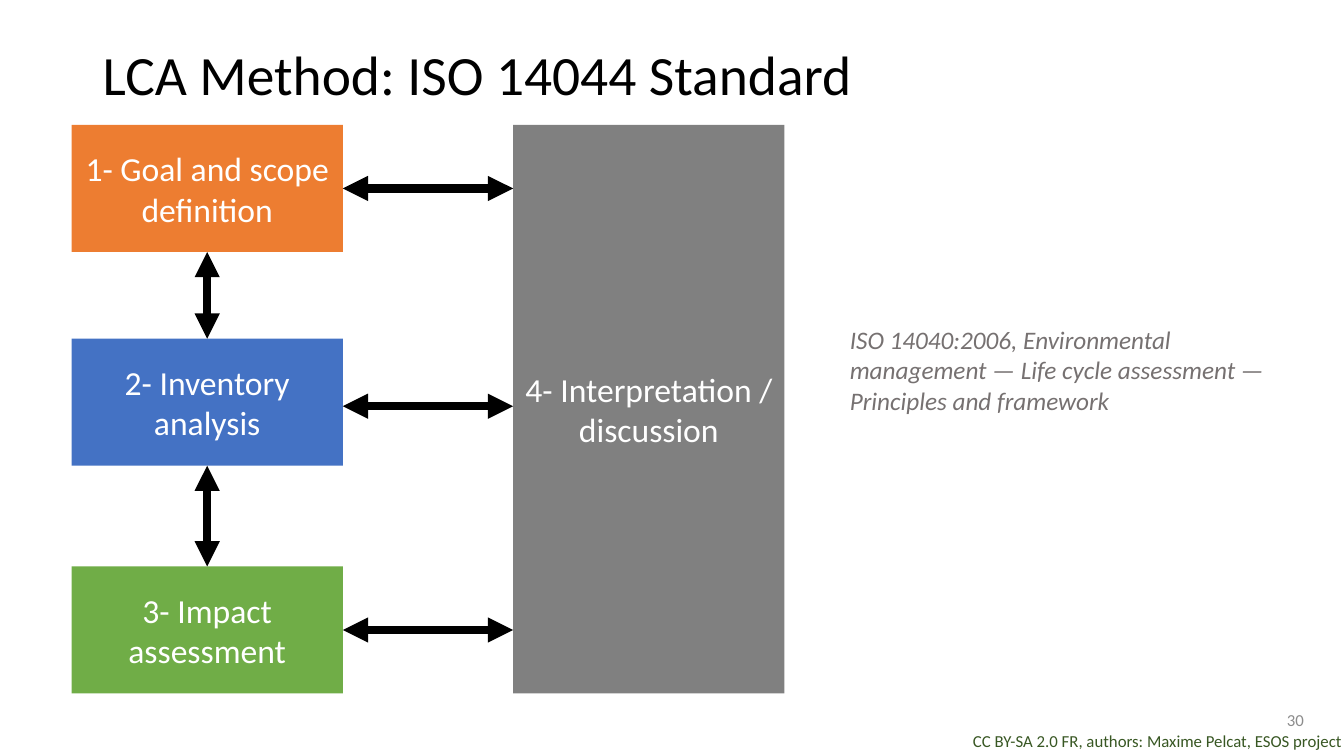
import dataclasses
import typing

import pptx
import pptx.dml.color
import pptx.enum.shapes
import pptx.enum.text
import pptx.oxml.xmlchemy
import pptx.util

Inches = pptx.util.Inches
Align = pptx.enum.text.PP_ALIGN
Anchor = pptx.enum.text.MSO_ANCHOR
TOP, LEFT, BOTTOM, RIGHT = range(4)
BOX_W, BOX_H = 2.69, 1.26
STEP_X, TALK_X, FIRST_Y = 0.71, 5.09, 1.24


@dataclasses.dataclass
class Box:
    text: str
    x: float
    y: float
    w: float
    h: float
    fill: str

    @property
    def mid(self) -> float:
        return round(self.y + self.h / 2, 2)


@dataclasses.dataclass
class Label:
    text: str
    x: float
    y: float
    w: float
    h: float
    size: float
    color: str
    align: typing.Any = Align.LEFT
    anchor: typing.Any = Anchor.TOP
    italic: bool = False
    spacing: float = 1.0


def rgb(code: str) -> pptx.dml.color.RGBColor:
    return pptx.dml.color.RGBColor.from_string(code)


def write(shape: typing.Any, text: str, size: float, color: str, align: typing.Any,
          anchor: typing.Any, italic: bool = False, spacing: float = 1.0) -> None:
    frame = shape.text_frame
    frame.word_wrap = True
    frame.vertical_anchor = anchor
    para = frame.paragraphs[0]
    para.alignment = align
    para.line_spacing = spacing
    run = para.add_run()
    run.text = text
    style = {"name": "Calibri", "size": pptx.util.Pt(size), "italic": italic}
    for key, value in style.items():
        setattr(run.font, key, value)
    run.font.color.rgb = rgb(color)


def draw_box(slide: typing.Any, box: Box) -> typing.Any:
    shape = slide.shapes.add_shape(
        pptx.enum.shapes.MSO_SHAPE.RECTANGLE,
        *map(Inches, (box.x, box.y, box.w, box.h)))
    shape.shadow.inherit = False
    shape.fill.solid()
    shape.fill.fore_color.rgb = rgb(box.fill)
    shape.line.fill.background()
    write(shape, box.text, 24, "FFFFFF", Align.CENTER, Anchor.MIDDLE)
    return shape


def draw_label(slide: typing.Any, label: Label) -> None:
    shape = slide.shapes.add_textbox(
        *map(Inches, (label.x, label.y, label.w, label.h)))
    write(shape, label.text, label.size, label.color, label.align,
          label.anchor, label.italic, label.spacing)


def draw_arrow(slide: typing.Any, x1: float, y1: float, x2: float, y2: float) -> typing.Any:
    arrow = slide.shapes.add_connector(
        pptx.enum.shapes.MSO_CONNECTOR.STRAIGHT, *map(Inches, (x1, y1, x2, y2)))
    arrow.line.color.rgb = rgb("000000")
    arrow.line.width = pptx.util.Pt(6)
    line = arrow.line._get_or_add_ln()
    for end in ("a:headEnd", "a:tailEnd"):
        tip = pptx.oxml.xmlchemy.OxmlElement(end)
        tip.set("type", "triangle")
        line.append(tip)
    arrow._element.spPr.append(pptx.oxml.xmlchemy.OxmlElement("a:effectLst"))
    return arrow


# Content
STEPS = [
    Box("1- Goal and scope definition", STEP_X, FIRST_Y, BOX_W, BOX_H, "ED7D31"),
    Box("2- Inventory analysis", STEP_X, 3.36, BOX_W, BOX_H, "4472C4"),
    Box("3- Impact assessment", STEP_X, 5.62, BOX_W, BOX_H, "70AD47"),
]
TALK = Box("4- Interpretation / discussion", TALK_X, FIRST_Y, BOX_W, 5.64, "808080")
LINKS = [1.87, 4.03, 6.25]  # heights of the arrows to the discussion
LABELS = [
    Label("CC BY-SA 2.0 FR, authors: Maxime Pelcat, ESOS project",
          8.92, 7.2, 4.49, 0.3, 12, "385723", Align.RIGHT),
    Label("LCA Method: ISO 14044 Standard", 0.92, 0.4, 11.5, 0.73, 39.6, "000000",
          anchor=Anchor.MIDDLE, spacing=0.9),
    Label("30", 12.23, 6.94, 0.8, 0.4, 12, "8C8C8C", Align.RIGHT, Anchor.MIDDLE),
    Label("ISO 14040:2006, Environmental management — Life cycle assessment — "
          "Principles and framework", 8.33, 3.17, 4.58, 1.01, 18, "767171", italic=True),
]


def main() -> None:
    deck = pptx.Presentation()
    deck.slide_width, deck.slide_height = Inches(13.33), Inches(7.5)
    slide = deck.slides.add_slide(deck.slide_layouts[6])

    # Title, reference and footer
    for label in LABELS:
        draw_label(slide, label)

    # Boxes
    shapes = [draw_box(slide, step) for step in STEPS]
    draw_box(slide, TALK)

    # Arrows from each step to the discussion
    for step, shape, y in zip(STEPS, shapes, LINKS):
        arrow = draw_arrow(slide, step.x + step.w, y, TALK.x, y)
        if y == step.mid:
            arrow.begin_connect(shape, RIGHT)

    # Arrows between the steps
    x = STEP_X + BOX_W / 2
    for i in range(len(STEPS) - 1):
        arrow = draw_arrow(slide, x, STEPS[i].y + BOX_H, x, STEPS[i + 1].y)
        arrow.begin_connect(shapes[i], BOTTOM)
        arrow.end_connect(shapes[i + 1], TOP)

    deck.save("out.pptx")


if __name__ == "__main__":
    main()
